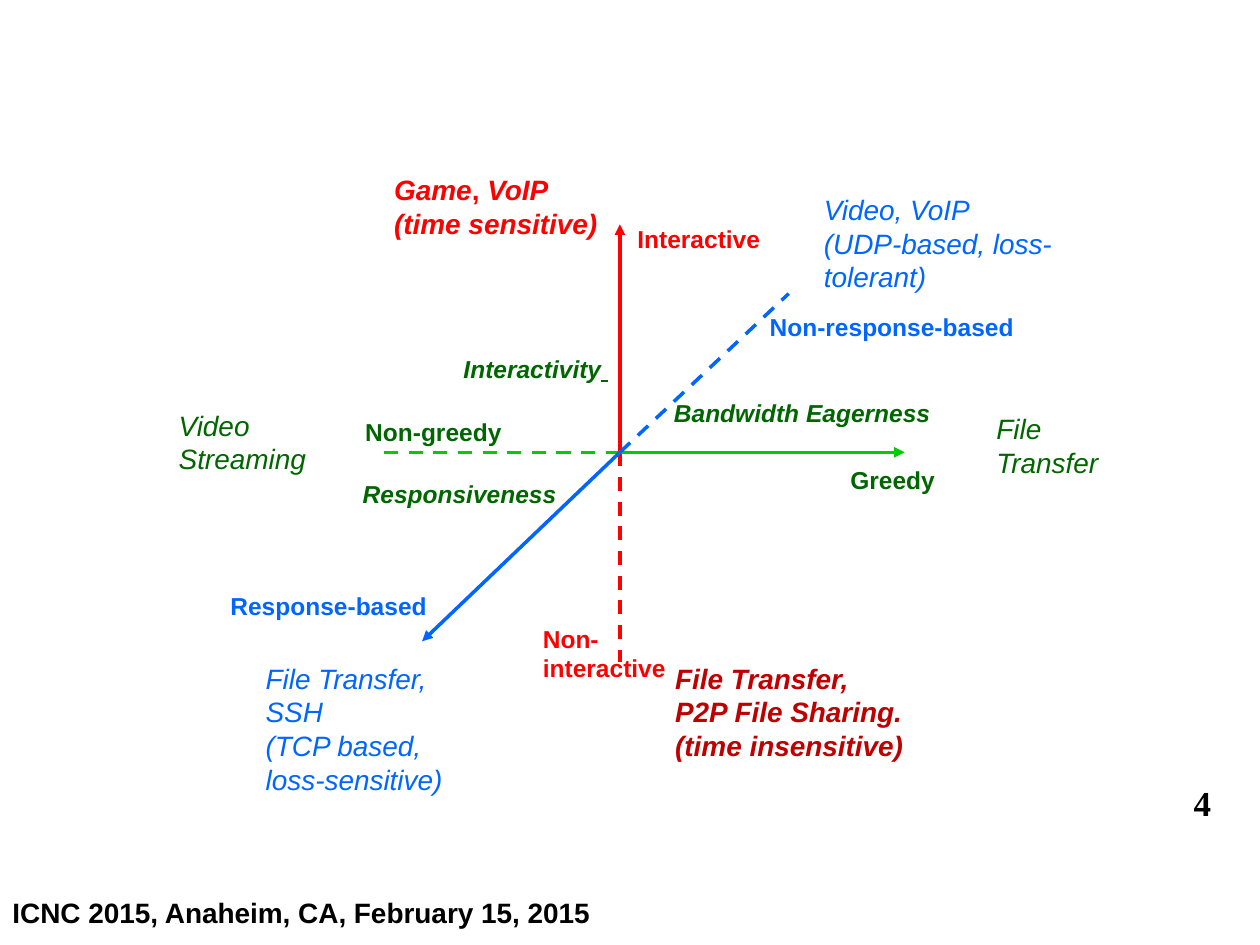
import pptx
import pptx.dml.color
import pptx.enum.dml
import pptx.enum.shapes
import pptx.enum.text
import pptx.oxml.ns
import pptx.util
from lxml import etree

Inches = pptx.util.Inches
RED, DARK_RED, BLUE = "FF0000", "C00000", "0066FF"
GREEN, DARK_GREEN, BLACK = "00CC00", "006600", "000000"
ORIGIN = (4.92, 3.59)


def rgb(color):
    return pptx.dml.color.RGBColor.from_string(color)


def add_run(p, text, size, color, bold=False, italic=False,
            underline=None, font="Arial"):
    r = p.add_run()
    r.text = text
    f = r.font
    f.name, f.size = font, pptx.util.Pt(size)
    f.bold, f.italic, f.underline = bold, italic, underline
    f.color.rgb = rgb(color)


def add_box(s, left, top, width, height):
    tf = s.shapes.add_textbox(*map(Inches, (left, top, width, height))).text_frame
    tf.word_wrap = True
    return tf


def add_text(s, box, lines, size, color, **style):
    """Write each line as a paragraph of one run."""
    tf = add_box(s, *box)
    for i, line in enumerate(lines):
        p = tf.add_paragraph() if i else tf.paragraphs[0]
        add_run(p, line, size, color, **style)
    return tf


def add_half_axis(s, end, color, dashed=False):
    """Draw from the origin: solid with an arrowhead, or dashed without."""
    c = s.shapes.add_connector(pptx.enum.shapes.MSO_CONNECTOR.STRAIGHT,
                               *map(Inches, ORIGIN + end))
    c.line.color.rgb = rgb(color)
    c.line.width = pptx.util.Pt(2)
    qn = pptx.oxml.ns.qn
    if dashed:
        c.line.dash_style = pptx.enum.dml.MSO_LINE.DASH
    else:
        etree.SubElement(c.line._get_or_add_ln(), qn("a:tailEnd"), type="triangle")
    etree.SubElement(c._element.spPr, qn("a:effectLst"))


def main():
    prs = pptx.Presentation()
    prs.slide_width, prs.slide_height = Inches(10), Inches(7.5)
    s = prs.slides.add_slide(prs.slide_layouts[6])

    # Slide number
    tf = add_text(s, (8.73, 6.15, 0.98, 0.52), ["4"], 20, BLACK,
                  bold=True, font="Times New Roman")
    tf.paragraphs[0].alignment = pptx.enum.text.PP_ALIGN.RIGHT

    # Example applications at the axis ends
    tf = add_box(s, 3.03, 1.32, 2.06, 0.64)
    p = tf.paragraphs[0]
    for text, italic in (("Game", True), (", ", False), ("VoIP", True)):
        add_run(p, text, 16, RED, bold=True, italic=italic)
    add_run(tf.add_paragraph(), "(time sensitive)", 16, RED, bold=True, italic=True)

    examples = [
        ((5.26, 5.2, 2.05, 0.91), DARK_RED, True,
         ["File Transfer,", "P2P File Sharing.", "(time insensitive)"]),
        ((6.44, 1.48, 2.05, 0.91), BLUE, False,
         ["Video, VoIP", "(UDP-based, loss-tolerant)"]),
        ((2.01, 5.2, 1.89, 1.18), BLUE, False,
         ["File Transfer,", "SSH", "(TCP based, loss-sensitive)"]),
        ((7.81, 3.22, 1.1, 0.64), DARK_GREEN, False, ["File", "Transfer"]),
        ((1.32, 3.19, 1.23, 0.64), DARK_GREEN, False, ["Video", "Streaming"]),
    ]
    for box, color, bold, lines in examples:
        add_text(s, box, lines, 16, color, bold=bold, italic=True)

    # Axes: arrow end, dashed end
    axes = [
        ((4.92, 1.78), (4.92, 5.25), RED),
        ((7.18, 3.59), (3.03, 3.59), GREEN),
        ((3.35, 5.09), (6.26, 2.33), BLUE),
    ]
    for arrow_end, dashed_end, color in axes:
        add_half_axis(s, arrow_end, color)
        add_half_axis(s, dashed_end, color, dashed=True)

    # Axis names
    add_text(s, (5.25, 3.11, 2.28, 0.34), ["Bandwidth Eagerness"], 14,
             DARK_GREEN, bold=True, italic=True)
    add_text(s, (2.78, 3.75, 1.81, 0.34), ["Responsiveness"], 14,
             DARK_GREEN, bold=True, italic=True)
    tf = add_text(s, (3.58, 2.76, 1.51, 0.34), ["Interactivity"], 14,
                  DARK_GREEN, bold=True, italic=True)
    add_run(tf.paragraphs[0], " ", 14, DARK_GREEN, bold=True, italic=True,
            underline=True)

    # Axis end labels
    end_labels = [
        ((6.01, 2.43, 2.28, 0.34), "Non-response-based", BLUE),
        ((1.73, 4.64, 2.28, 0.34), "Response-based", BLUE),
        ((6.65, 3.64, 0.95, 0.34), "Greedy", DARK_GREEN),
        ((2.8, 3.26, 1.49, 0.34), "Non-greedy", DARK_GREEN),
        ((4.96, 1.73, 1.19, 0.34), "Interactive", RED),
        ((4.21, 4.9, 1.19, 0.57), "Non-interactive", RED),
    ]
    for box, text, color in end_labels:
        add_text(s, box, [text], 14, color, bold=True)

    # Footer
    add_text(s, (0, 7.06, 5.55, 0.45),
             ["ICNC 2015, Anaheim, CA, February 15, 2015"], 16, BLACK, bold=True)

    prs.save("out.pptx")


if __name__ == "__main__":
    main()
